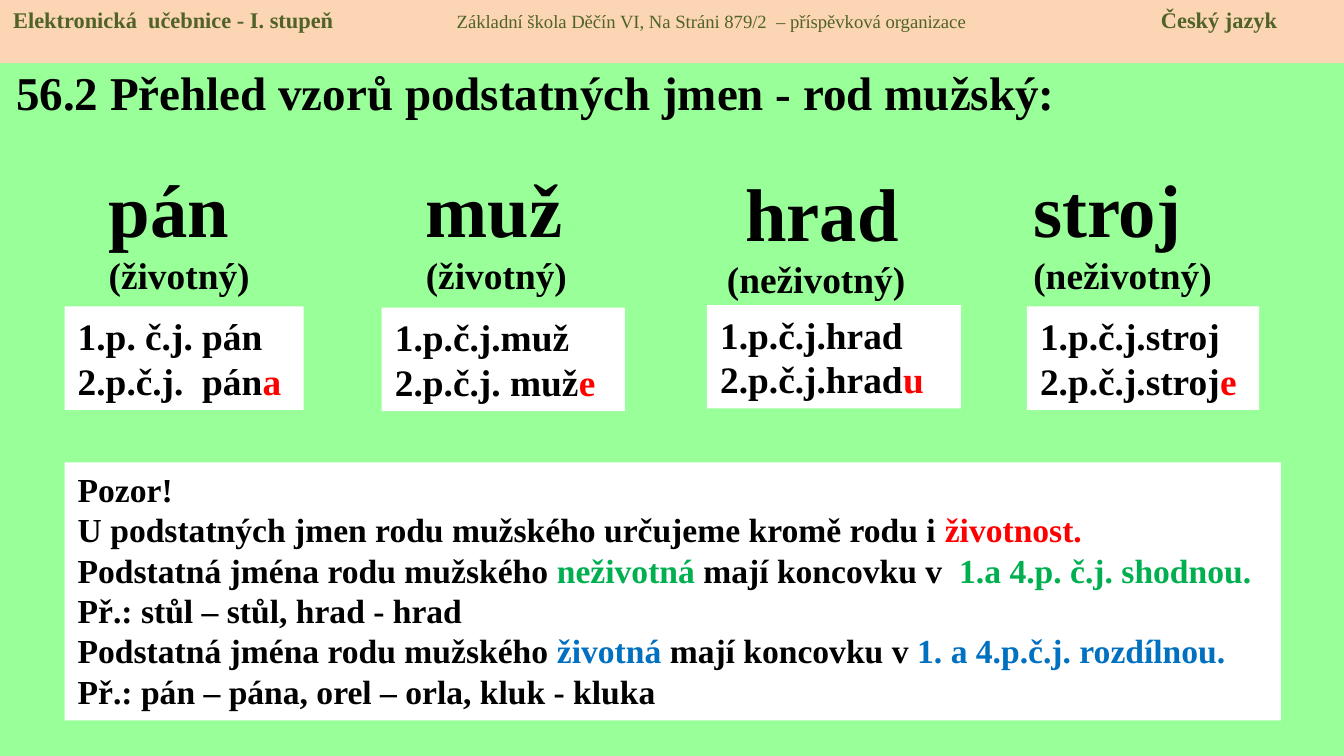
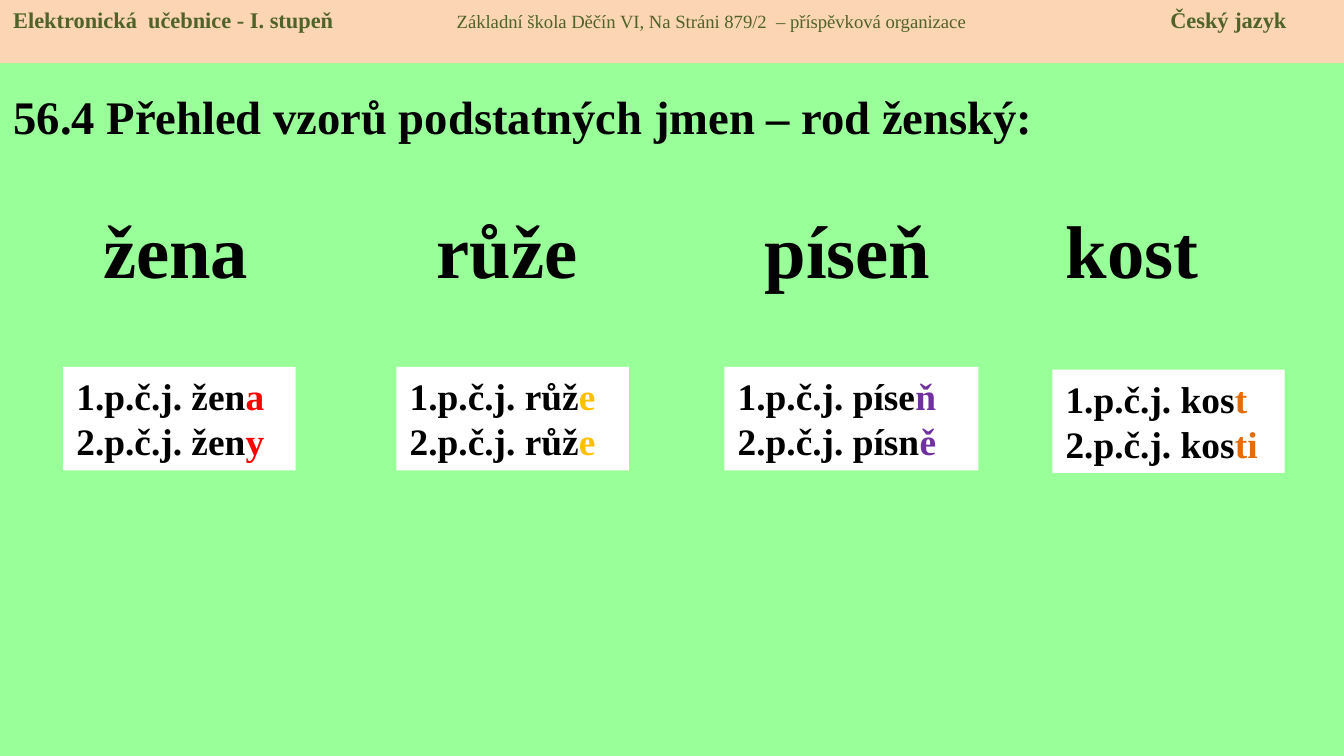
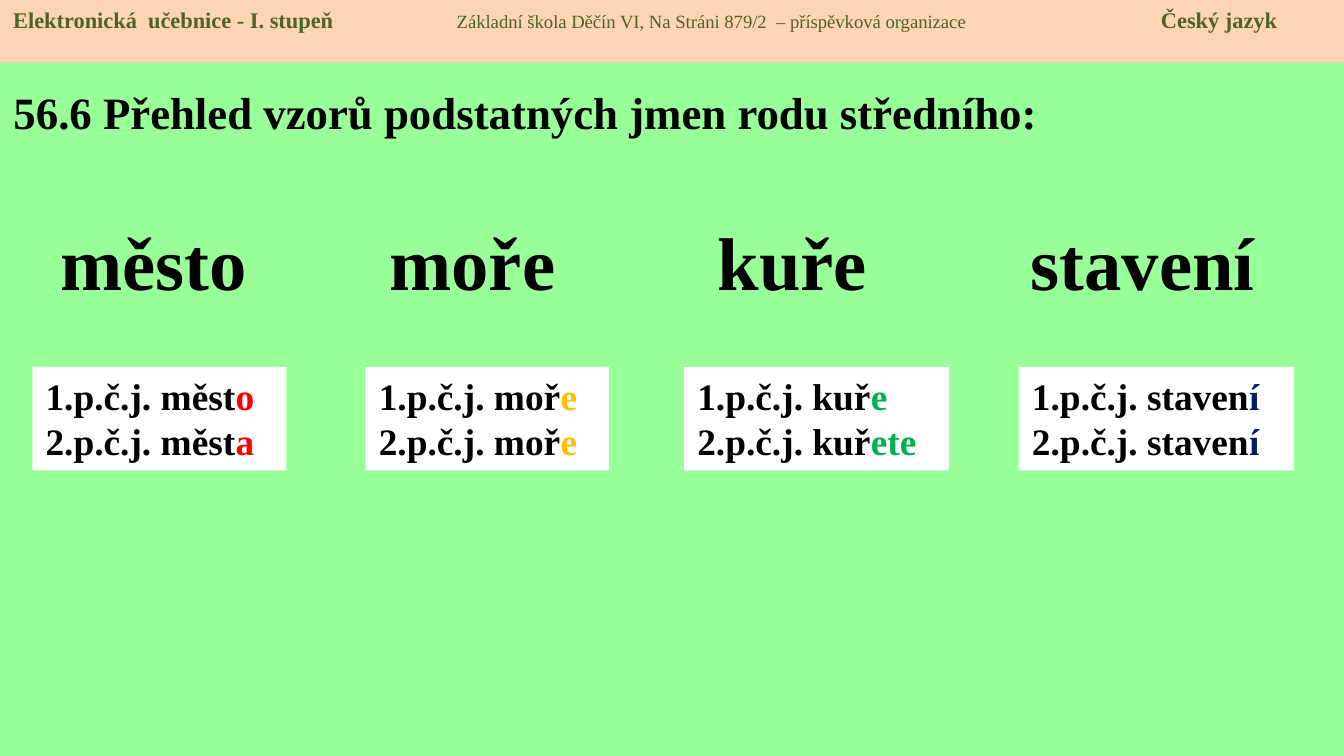
from dataclasses import dataclass

from lxml import etree
from pptx import Presentation
from pptx.dml.color import RGBColor
from pptx.enum.shapes import MSO_SHAPE
from pptx.enum.text import MSO_ANCHOR, MSO_AUTO_SIZE, PP_ALIGN
from pptx.oxml.ns import qn
from pptx.shapes.autoshape import Shape
from pptx.slide import Slide
from pptx.text.text import TextFrame, _Paragraph
from pptx.util import Inches, Pt

RECTANGLE = MSO_SHAPE.RECTANGLE
TOP, MIDDLE = MSO_ANCHOR.TOP, MSO_ANCHOR.MIDDLE
LEFT = PP_ALIGN.LEFT
NO_AUTOFIT = MSO_AUTO_SIZE.NONE

FONT = "Times New Roman"
GREEN_BACKGROUND = "99FF99"
PEACH = "FCD5B5"
OLIVE = "4F6228"
WHITE = "FFFFFF"
BLACK = "000000"
RED = "FF0000"
YELLOW = "FFC000"
GREEN = "00B050"
BLUE = "0070C0"
NAVY = "002060"
PURPLE = "7030A0"
ORANGE = "E46C0A"

SLIDE_WIDTH = Inches(10)
SLIDE_HEIGHT = SLIDE_WIDTH * 9 // 16
SCHOOL_TAB = 3.3
CARD_HEIGHT = 0.77


@dataclass(frozen=True)
class Area:
    left: float
    top: float
    width: float
    height: float


@dataclass(frozen=True)
class Span:
    text: str
    color: str = BLACK
    size: float = 20
    bold: bool = True


@dataclass(frozen=True)
class Pattern:
    word: str
    word_left: float
    word_width: float
    card_left: float
    card_width: float
    card_top: float
    forms: tuple[tuple[str, str], tuple[str, str]]
    color: str
    animacy: str = ""
    word_shift: float = 0


@dataclass(frozen=True)
class Lesson:
    title: str
    title_area: Area
    title_size: float
    title_bottom_inset: float
    subject_tab: float
    word_top: float
    patterns: tuple[Pattern, ...]
    note: tuple[tuple[Span, ...], ...] = ()


def note_line(*parts: tuple[str, str]) -> tuple[Span, ...]:
    return tuple(Span(text, color, 18) for text, color in parts)


NOTE_AREA = Area(0.48, 3.44, 9.05, 1.92)
NOTE = (
    note_line(("Pozor!", BLACK)),
    note_line(
        ("U podstatných jmen rodu mužského určujeme kromě rodu i ", BLACK),
        ("životnost.", RED),
    ),
    note_line(
        ("Podstatná jména rodu mužského ", BLACK),
        ("neživotná ", GREEN),
        ("mají koncovku v  ", BLACK),
        ("1.a 4.p. č.j. shodnou.", GREEN),
    ),
    note_line(("Př.: stůl – stůl, hrad - hrad", BLACK)),
    note_line(
        ("Podstatná jména rodu mužského ", BLACK),
        ("životná", BLUE),
        (" mají koncovku v ", BLACK),
        ("1. a 4.p.č.j. rozdílnou.", BLUE),
    ),
    note_line(("Př.: pán – pána, orel – orla, kluk - kluka", BLACK)),
)

LESSONS = (
    Lesson(
        "56.2 Přehled vzorů podstatných jmen - rod mužský:",
        Area(0.02, 0.54, 9.17, 0.65), 25.2, 0.42, 8.54, 1.16,
        (
            Pattern("pán", 0.71, 1.46, 0.48, 1.78, 2.28,
                    (("1.p. č.j. pán", ""), ("2.p.č.j.  pán", "a")), RED, "(životný)"),
            Pattern("muž", 3.07, 1.34, 2.84, 1.81, 2.29,
                    (("1.p.č.j.muž", ""), ("2.p.č.j. muž", "e")), RED, "(životný)"),
            Pattern(" hrad", 5.31, 1.73, 5.26, 1.89, 2.27,
                    (("1.p.č.j.hrad", ""), ("2.p.č.j.hrad", "u")), RED, "(neživotný)", 0.03),
            Pattern("stroj", 7.59, 1.66, 7.64, 1.73, 2.28,
                    (("1.p.č.j.stroj", ""), ("2.p.č.j.stroj", "e")), RED, "(neživotný)"),
        ),
        NOTE,
    ),
    Lesson(
        "56.4 Přehled vzorů podstatných jmen – rod ženský:",
        Area(0, 0.54, 9.57, 0.65), 25, 0.05, 8.61, 1.47,
        (
            Pattern("žena", 0.67, 1.34, 0.47, 1.73, 2.73,
                    (("1.p.č.j. žen", "a"), ("2.p.č.j. žen", "y")), RED),
            Pattern("růže", 3.15, 1.34, 2.95, 1.73, 2.73,
                    (("1.p.č.j. růž", "e"), ("2.p.č.j. růž", "e")), YELLOW),
            Pattern("píseň", 5.59, 1.5, 5.39, 1.89, 2.73,
                    (("1.p.č.j. píse", "ň"), ("2.p.č.j. písn", "ě")), PURPLE),
            Pattern("kost", 7.83, 1.57, 7.83, 1.73, 2.75,
                    (("1.p.č.j. kos", "t"), ("2.p.č.j. kos", "ti")), ORANGE),
        ),
    ),
    Lesson(
        "56.6 Přehled vzorů podstatných jmen rodu středního:",
        Area(0, 0.5, 9.67, 1.07), 24, 0.46, 8.54, 1.56,
        (
            Pattern("město", 0.35, 1.65, 0.24, 1.89, 2.73,
                    (("1.p.č.j. měst", "o"), ("2.p.č.j. měst", "a")), RED),
            Pattern("moře", 2.8, 1.65, 2.72, 1.81, 2.73,
                    (("1.p.č.j. moř", "e"), ("2.p.č.j. moř", "e")), YELLOW),
            Pattern("kuře", 5.24, 1.42, 5.09, 1.97, 2.73,
                    (("1.p.č.j. kuř", "e"), ("2.p.č.j. kuř", "ete")), GREEN),
            Pattern("stavení", 7.57, 2.05, 7.58, 2.05, 2.73,
                    (("1.p.č.j. staven", "í"), ("2.p.č.j. staven", "í")), NAVY),
        ),
    ),
)


def rgb(color: str) -> RGBColor:
    return RGBColor.from_string(color)


def lengths(area: Area) -> tuple[int, int, int, int]:
    return Inches(area.left), Inches(area.top), Inches(area.width), Inches(area.height)


def write_spans(para: _Paragraph, spans: tuple[Span, ...]) -> None:
    para.alignment = LEFT
    for span in spans:
        run = para.add_run()
        run.text = span.text
        run.font.name = FONT
        run.font.size = Pt(span.size)
        run.font.bold = span.bold
        run.font.color.rgb = rgb(span.color)


def write_lines(frame: TextFrame, lines: tuple[tuple[Span, ...], ...]) -> None:
    frame.word_wrap = True
    frame.vertical_anchor = TOP
    for index, spans in enumerate(lines):
        para = frame.add_paragraph() if index else frame.paragraphs[0]
        write_spans(para, spans)


def add_panel(page: Slide, area: Area, fill: str) -> Shape:
    panel = page.shapes.add_shape(RECTANGLE, *lengths(area))
    panel.shadow.inherit = False
    panel.fill.solid()
    panel.fill.fore_color.rgb = rgb(fill)
    panel.line.fill.background()
    return panel


def add_tab_stops(para: _Paragraph, positions: tuple[float, ...]) -> None:
    tab_list = etree.SubElement(para._p.get_or_add_pPr(), qn("a:tabLst"))
    for position in positions:
        etree.SubElement(tab_list, qn("a:tab"), pos=str(Inches(position)), algn="l")


def add_band(page: Slide, subject_tab: float) -> None:
    band = add_panel(page, Area(0, 0, 10, 0.47), PEACH)
    add_tab_stops(band.text_frame.paragraphs[0], (SCHOOL_TAB, subject_tab))
    write_lines(band.text_frame, ((
        Span("Elektronická  učebnice - I. stupeň\t", OLIVE, 12),
        Span("Základní škola Děčín VI, Na Stráni 879/2  – příspěvková organizace\t", OLIVE, 10, False),
        Span("Český jazyk", OLIVE, 12),
    ),))


def set_title(page: Slide, lesson: Lesson) -> None:
    title = page.shapes.title
    title.left, title.top, title.width, title.height = lengths(lesson.title_area)
    frame = title.text_frame
    write_lines(frame, ((Span(lesson.title, size=lesson.title_size),),))
    frame.auto_size = NO_AUTOFIT
    frame.vertical_anchor = MIDDLE
    frame.margin_bottom = Inches(lesson.title_bottom_inset)


def add_pattern(page: Slide, pattern: Pattern, word_top: float) -> None:
    word_lines = ((Span(pattern.word, size=40),),)
    if pattern.animacy:
        word_lines += ((Span(pattern.animacy),),)
    word_height = 1.11 if pattern.animacy else 0.77
    word_area = Area(pattern.word_left, word_top + pattern.word_shift, pattern.word_width, word_height)
    word_box = page.shapes.add_textbox(*lengths(word_area))
    write_lines(word_box.text_frame, word_lines)

    card_area = Area(pattern.card_left, pattern.card_top, pattern.card_width, CARD_HEIGHT)
    card = add_panel(page, card_area, WHITE)
    write_lines(card.text_frame, tuple(
        (Span(stem), Span(ending, pattern.color)) if ending else (Span(stem),)
        for stem, ending in pattern.forms
    ))


def main() -> None:
    deck = Presentation()
    deck.slide_width, deck.slide_height = SLIDE_WIDTH, SLIDE_HEIGHT
    background = deck.slide_master.background.fill
    background.solid()
    background.fore_color.rgb = rgb(GREEN_BACKGROUND)
    title_only = deck.slide_layouts.get_by_name("Title Only")
    for lesson in LESSONS:
        page = deck.slides.add_slide(title_only)
        set_title(page, lesson)
        add_band(page, lesson.subject_tab)
        for pattern in lesson.patterns:
            add_pattern(page, pattern, lesson.word_top)
        if lesson.note:
            write_lines(add_panel(page, NOTE_AREA, WHITE).text_frame, lesson.note)
    deck.save("out.pptx")


if __name__ == "__main__":
    main()
